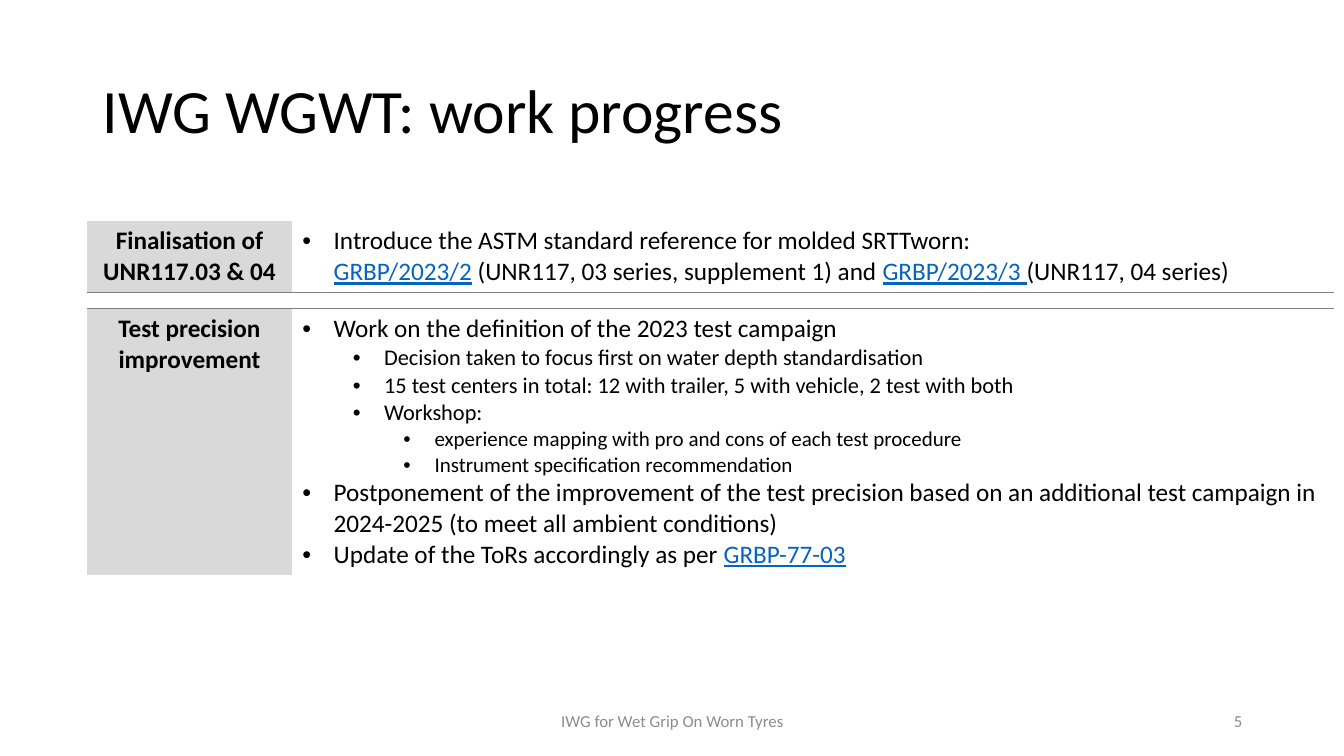
import pptx
import pptx.util
import pptx.dml.color
import pptx.enum.text
import pptx.oxml
import pptx.oxml.ns

WIDTH, HEIGHT = 13.33, 7.5
FONT = "Calibri"
BLACK, LINK, GREY, SHADE, RULE = "000000", "0563C1", "8C8C8C", "D9D9D9", "808080"
ALIGN = pptx.enum.text.PP_ALIGN
MIDDLE = pptx.enum.text.MSO_ANCHOR.MIDDLE
LEVEL_SIZES = (18, 16, 15)
HANG, LEVEL_STEP = 0.31, 0.5
COLUMNS = (2.04, 10.33)
ROWS = (0.71, 0.16, 2.64)
NO_STYLE = "{2D5ABB26-0587-4C30-8999-92F81FD0307C}"

FINALISATION = [
    (0, [("Introduce the ASTM standard reference for molded SRTTworn: ", False),
         ("\n", False),
         ("GRBP/2023/2", True),
         (" (UNR117, 03 series, supplement 1) and ", False),
         ("GRBP/2023/3 ", True),
         ("(UNR117, 04 series)", False)]),
]
PRECISION = [
    (0, [("Work on the definition of the 2023 test campaign", False)]),
    (1, [("Decision taken to focus first on water depth standardisation", False)]),
    (1, [("15 test centers in total: 12 with trailer, 5 with vehicle, 2 test with both", False)]),
    (1, [("Workshop:", False)]),
    (2, [("experience mapping with pro and cons of each test procedure", False)]),
    (2, [("Instrument specification recommendation", False)]),
    (0, [("Postponement of the improvement of the test precision based on an additional "
          "test campaign in 2024-2025 (to meet all ambient conditions)", False)]),
    (0, [("Update of the ToRs accordingly as per ", False), ("GRBP-77-03", True)]),
]


def color(value):
    """Turn a hex string into a colour."""
    return pptx.dml.color.RGBColor.from_string(value)


def inches(*values):
    """Turn numbers into lengths in inches."""
    return [pptx.util.Inches(value) for value in values]


def element(markup):
    """Parse markup in the drawing namespace."""
    return pptx.oxml.parse_xml(markup.replace(" ", f" {pptx.oxml.ns.nsdecls('a')} ", 1))


def add_span(para, text, size, hue=BLACK, bold=False, underline=False):
    """Add one formatted run to a paragraph."""
    span = para.add_run()
    span.text = text
    span.font.name = FONT
    span.font.size = pptx.util.Pt(size)
    span.font.color.rgb = color(hue)
    span.font.bold = bold
    span.font.underline = underline


def add_title(page, box, text):
    """Move and fill the title placeholder."""
    title = page.shapes.title
    title.left, title.top, title.width, title.height = inches(*box)
    title.text_frame.vertical_anchor = MIDDLE
    para = title.text_frame.paragraphs[0]
    para.alignment = ALIGN.LEFT
    para.line_spacing = 0.9
    add_span(para, text, 44)


def add_footer(page, box, text, alignment):
    """Add one grey footer text in its box."""
    frame = page.shapes.add_textbox(*inches(*box)).text_frame
    frame.word_wrap = True
    frame.vertical_anchor = MIDDLE
    para = frame.paragraphs[0]
    para.alignment = alignment
    add_span(para, text, 12, GREY)


def add_border(cell, side):
    """Draw a thin rule on one side of a cell."""
    line = element(f'<a:{side} w="12700"><a:solidFill><a:srgbClr val="{RULE}"/>'
                   f'</a:solidFill></a:{side}>')
    cell._tc.get_or_add_tcPr().insert(0, line)


def fill_heading(cell, text):
    """Write a bold centred heading on a shaded cell."""
    cell.fill.solid()
    cell.fill.fore_color.rgb = color(SHADE)
    para = cell.text_frame.paragraphs[0]
    para.alignment = ALIGN.CENTER
    add_span(para, text, LEVEL_SIZES[0], bold=True)


def fill_bullets(cell, items):
    """Write bulleted paragraphs at their levels."""
    frame = cell.text_frame
    for index, (level, spans) in enumerate(items):
        para = frame.add_paragraph() if index else frame.paragraphs[0]
        para.level = level
        props = para._p.get_or_add_pPr()
        props.set("marL", str(pptx.util.Inches(HANG + level * LEVEL_STEP)))
        props.set("indent", str(-pptx.util.Inches(HANG)))
        props.append(element('<a:buFont typeface="Arial"/>'))
        props.append(element('<a:buChar char="•"/>'))
        for text, linked in spans:
            if text == "\n":
                para.add_line_break()
            else:
                add_span(para, text, LEVEL_SIZES[level], LINK if linked else BLACK,
                         underline=linked)


def fill_gap(cell):
    """Shrink an empty cell to a thin gap under the rule."""
    cell.margin_top = cell.margin_bottom = 0
    cell.text_frame.paragraphs[0]._p.append(element('<a:endParaRPr sz="200"/>'))
    add_border(cell, "lnT")


def add_progress_table(page, left, top):
    """Add the topic table with a ruled gap between its two topics."""
    box = inches(left, top, sum(COLUMNS), sum(ROWS))
    table = page.shapes.add_table(len(ROWS), len(COLUMNS), *box).table
    table.first_row = table.horz_banding = False
    table._tbl.tblPr.find(pptx.oxml.ns.qn("a:tableStyleId")).text = NO_STYLE
    for column, width in zip(table.columns, inches(*COLUMNS)):
        column.width = width
    for row, height in zip(table.rows, inches(*ROWS)):
        row.height = height
    for cell in table.iter_cells():
        cell.fill.background()
    topics = {0: ("Finalisation of UNR117.03 & 04", FINALISATION),
              2: ("Test precision improvement", PRECISION)}
    for row, (heading, items) in topics.items():
        fill_heading(table.cell(row, 0), heading)
        fill_bullets(table.cell(row, 1), items)
    for column in range(len(COLUMNS)):
        add_border(table.cell(0, column), "lnB")
        fill_gap(table.cell(1, column))


def main():
    """Build the deck and save it."""
    deck = pptx.Presentation()
    deck.slide_width, deck.slide_height = inches(WIDTH, HEIGHT)
    page = deck.slides.add_slide(deck.slide_layouts[5])
    add_title(page, (0.92, 0.4, 11.5, 1.45), "IWG WGWT: work progress")
    add_progress_table(page, 0.86, 2.19)
    add_footer(page, (4.42, 6.95, 4.5, 0.4), "IWG for Wet Grip On Worn Tyres", ALIGN.CENTER)
    add_footer(page, (9.42, 6.95, 3, 0.4), "5", ALIGN.RIGHT)
    deck.save("out.pptx")


if __name__ == "__main__":
    main()
